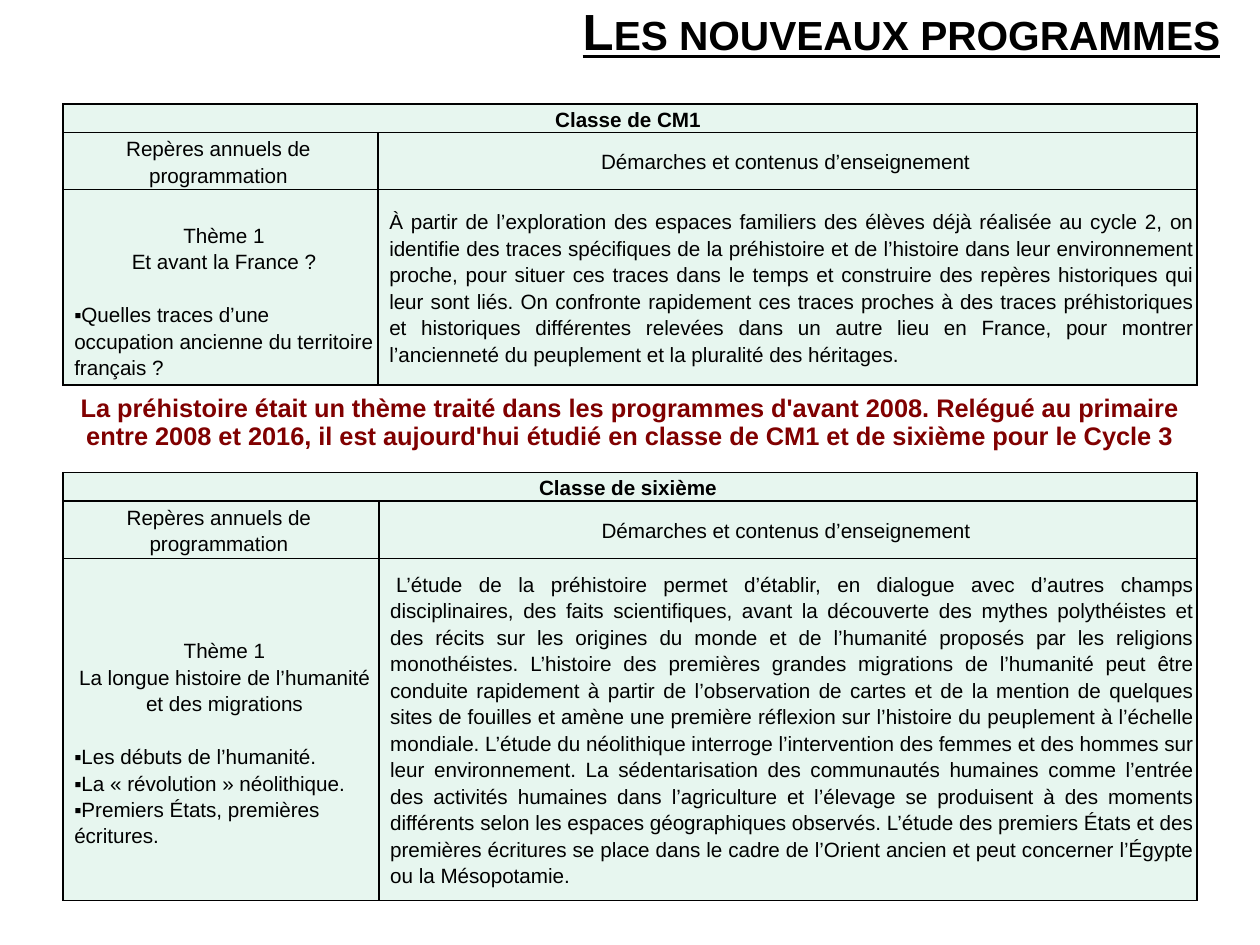
from lxml import etree
from pptx import Presentation
from pptx.dml.color import RGBColor
from pptx.enum.text import MSO_ANCHOR, MSO_AUTO_SIZE, PP_ALIGN
from pptx.oxml.ns import qn
from pptx.util import Cm, Pt

LEFT, CENTER, JUSTIFY = PP_ALIGN.LEFT, PP_ALIGN.CENTER, PP_ALIGN.JUSTIFY
MIDDLE = MSO_ANCHOR.MIDDLE
FONT, BLACK, DARK_RED, MINT = "Arial", "000000", "800000", "E7F6EF"
BODY_SIZE = 13
LINE_CM = 0.59
TABLE_LEFT, TABLE_WIDTH = 1.4, 25.2

TITLE = "Les nouveaux programmes"
MESSAGE = (
    "La préhistoire était un thème traité dans les programmes d'avant 2008. "
    "Relégué au primaire entre 2008 et 2016, il est aujourd'hui étudié en "
    "classe de CM1 et de sixième pour le Cycle 3"
)
HEADERS = ["Repères annuels de programmation", "Démarches et contenus d’enseignement"]
PROGRAMMES = [
    {
        "class": "Classe de CM1",
        "top": 2.31,
        "first_col": 7.0,
        "rows": [0.59, 1.18, 4.11],
        "theme": ["Thème 1", "Et avant la France ?"],
        "questions": ["Quelles traces d’une occupation ancienne du territoire français ?"],
        "first_line": 0,
        "sentences": [
            "À partir de l’exploration des espaces familiers des élèves déjà réalisée "
            "au cycle 2, on identifie des traces spécifiques de la préhistoire et de "
            "l’histoire dans leur environnement proche, pour situer ces traces dans le "
            "temps et construire des repères historiques qui leur sont liés.",
            "On confronte rapidement ces traces proches à des traces préhistoriques et "
            "historiques différentes relevées dans un autre lieu en France, pour montrer "
            "l’ancienneté du peuplement et la pluralité des héritages.",
        ],
    },
    {
        "class": "Classe de sixième",
        "top": 10.5,
        "first_col": 7.02,
        "rows": [0.63, 1.27, 7.6],
        "theme": ["Thème 1", "La longue histoire de l’humanité", "et des migrations"],
        "questions": [
            "Les débuts de l’humanité.",
            "La « révolution » néolithique.",
            "Premiers États, premières écritures.",
        ],
        "first_line": 0.13,
        "sentences": [
            "L’étude de la préhistoire permet d’établir, en dialogue avec d’autres champs "
            "disciplinaires, des faits scientifiques, avant la découverte des mythes "
            "polythéistes et des récits sur les origines du monde et de l’humanité proposés "
            "par les religions monothéistes.",
            "L’histoire des premières grandes migrations de l’humanité peut être conduite "
            "rapidement à partir de l’observation de cartes et de la mention de quelques "
            "sites de fouilles et amène une première réflexion sur l’histoire du peuplement "
            "à l’échelle mondiale.",
            "L’étude du néolithique interroge l’intervention des femmes et des hommes sur "
            "leur environnement.",
            "La sédentarisation des communautés humaines comme l’entrée des activités "
            "humaines dans l’agriculture et l’élevage se produisent à des moments "
            "différents selon les espaces géographiques observés.",
            "L’étude des premiers États et des premières écritures se place dans le cadre "
            "de l’Orient ancien et peut concerner l’Égypte ou la Mésopotamie.",
        ],
    },
]


def color(hex_value):
    return RGBColor.from_string(hex_value)


def write(p, text, size=BODY_SIZE, ink=BLACK, bold=False, align=LEFT, spacing=1.15):
    p.text = text
    p.alignment = align
    p.line_spacing = spacing
    font = p.runs[0].font
    font.name, font.size, font.bold = FONT, Pt(size), bold
    font.color.rgb = color(ink)


def indent(p, first_line=0):
    pPr = p._p.get_or_add_pPr()
    pPr.set("marL", str(Cm(0.25)))
    pPr.set("indent", str(Cm(first_line)))


def add_bullet(p):
    pPr = p._p.get_or_add_pPr()
    clr = etree.SubElement(pPr, qn("a:buClr"))
    etree.SubElement(clr, qn("a:srgbClr"), val=BLACK)
    etree.SubElement(pPr, qn("a:buFont"), typeface=FONT)
    etree.SubElement(pPr, qn("a:buChar"), char="▪")


def style_cell(cell):
    """Give a cell its margins, black borders and fill."""
    cell.vertical_anchor = MIDDLE
    cell.margin_left = cell.margin_top = cell.margin_bottom = 0
    cell.margin_right = Cm(0.1)
    tcPr = cell._tc.get_or_add_tcPr()
    for side in ("lnL", "lnR", "lnT", "lnB"):
        ln = etree.SubElement(tcPr, qn(f"a:{side}"), w=str(Pt(1)))
        fill = etree.SubElement(ln, qn("a:solidFill"))
        etree.SubElement(fill, qn("a:srgbClr"), val=BLACK)
    cell.fill.solid()
    cell.fill.fore_color.rgb = color(MINT)


def fill_theme(cell, theme, questions):
    cell.margin_top = Cm(LINE_CM)
    tf = cell.text_frame
    for i, line in enumerate(theme + questions):
        p = tf.add_paragraph() if i else tf.paragraphs[0]
        is_question = i >= len(theme)
        write(p, line, align=LEFT if is_question else CENTER)
        indent(p)
        if i == len(theme):
            p.space_before = Cm(LINE_CM)
        if is_question:
            add_bullet(p)


def add_programme(slide, prog):
    rows, first_col = prog["rows"], prog["first_col"]
    table = slide.shapes.add_table(
        len(rows), 2, Cm(TABLE_LEFT), Cm(prog["top"]), Cm(TABLE_WIDTH), Cm(sum(rows))
    ).table
    table.first_row = table.horz_banding = False
    for col, width in zip(table.columns, (first_col, TABLE_WIDTH - first_col)):
        col.width = Cm(width)
    for row, height in zip(table.rows, rows):
        row.height = Cm(height)
    for cell in table.iter_cells():
        style_cell(cell)

    table.cell(0, 0).merge(table.cell(0, 1))
    write(table.cell(0, 0).text_frame.paragraphs[0], prog["class"], bold=True, align=CENTER)
    for c, header in enumerate(HEADERS):
        write(table.cell(1, c).text_frame.paragraphs[0], header, align=CENTER)
    fill_theme(table.cell(2, 0), prog["theme"], prog["questions"])
    p = table.cell(2, 1).text_frame.paragraphs[0]
    write(p, " ".join(prog["sentences"]), align=JUSTIFY)
    indent(p, prog["first_line"])


def main():
    prs = Presentation()
    prs.slide_width, prs.slide_height = Cm(28), Cm(21)
    slide = prs.slides.add_slide(prs.slide_layouts[6])

    tf = slide.shapes.add_textbox(Cm(1.12), Cm(8.2), Cm(25.76), Cm(2.34)).text_frame
    tf.word_wrap = True
    tf.vertical_anchor = MIDDLE
    tf.margin_left = tf.margin_right = tf.margin_bottom = 0
    tf.margin_top = Cm(0.05)
    write(tf.paragraphs[0], MESSAGE, 16, DARK_RED, True, CENTER, 0.93)

    tf = slide.shapes.add_textbox(Cm(12.7), 0, Cm(15.32), Cm(1.52)).text_frame
    tf.word_wrap = False
    tf.auto_size = MSO_AUTO_SIZE.SHAPE_TO_FIT_TEXT
    p = tf.paragraphs[0]
    write(p, TITLE, 32, bold=True, spacing=0.93)
    font = p.runs[0].font
    font.underline = True
    font._element.set("cap", "small")

    for prog in PROGRAMMES:
        add_programme(slide, prog)

    prs.save("out.pptx")


if __name__ == "__main__":
    main()
